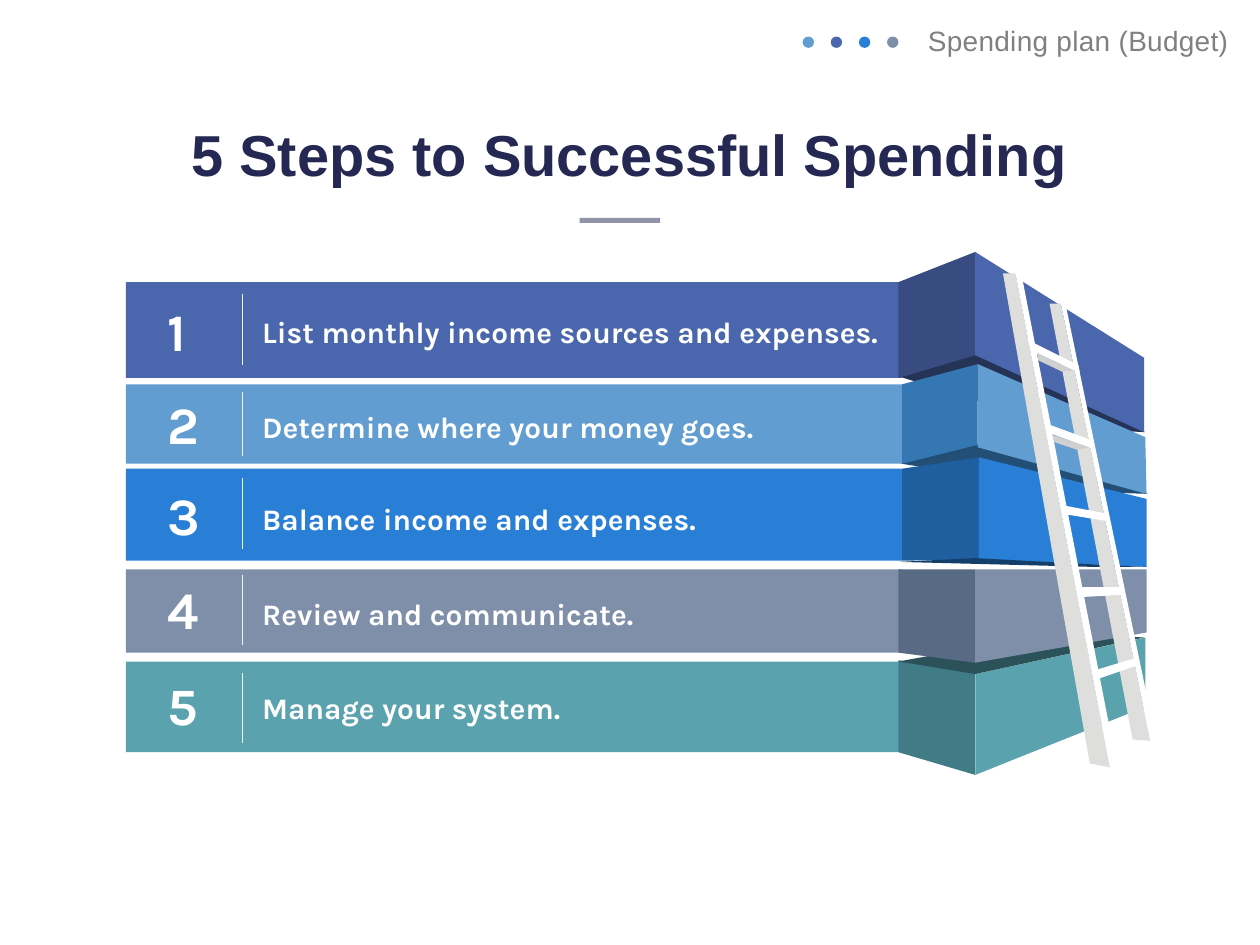
from lxml import etree
from pptx import Presentation
from pptx.dml.color import RGBColor
from pptx.enum.shapes import MSO_CONNECTOR, MSO_SHAPE
from pptx.enum.text import MSO_AUTO_SIZE, PP_ALIGN
from pptx.oxml.ns import qn
from pptx.util import Cm, Pt

RECTANGLE, OVAL = MSO_SHAPE.RECTANGLE, MSO_SHAPE.OVAL
STRAIGHT = MSO_CONNECTOR.STRAIGHT
GROW = MSO_AUTO_SIZE.SHAPE_TO_FIT_TEXT
LEFT, CENTER, RIGHT = PP_ALIGN.LEFT, PP_ALIGN.CENTER, PP_ALIGN.RIGHT

WHITE = RGBColor(0xFF, 0xFF, 0xFF)
GRAY = RGBColor(0x80, 0x80, 0x80)
NAVY = RGBColor(0x24, 0x28, 0x52)
INDIGO = RGBColor(0x4A, 0x66, 0xAC)
INDIGO_SIDE = RGBColor(0x38, 0x4C, 0x81)
INDIGO_UNDER = RGBColor(0x25, 0x33, 0x56)
SKY = RGBColor(0x62, 0x9D, 0xD1)
SKY_SIDE = RGBColor(0x34, 0x77, 0xB2)
SKY_UNDER = RGBColor(0x23, 0x4F, 0x77)
BLUE = RGBColor(0x29, 0x7F, 0xD5)
BLUE_SIDE = RGBColor(0x1F, 0x5F, 0xA0)
BLUE_UNDER = RGBColor(0x14, 0x3F, 0x6A)
SLATE = RGBColor(0x7F, 0x8F, 0xA9)
SLATE_SIDE = RGBColor(0x59, 0x6A, 0x85)
TEAL = RGBColor(0x5A, 0xA2, 0xAE)
TEAL_SIDE = RGBColor(0x41, 0x7B, 0x85)
TEAL_TOP = RGBColor(0x2B, 0x52, 0x59)
RULE = RGBColor(0xF1, 0xF0, 0xF0)
RAIL = RGBColor(0xDE, 0xDE, 0xDD)
RUNG_SHADE = RGBColor(0xCF, 0xD0, 0xD0)

# Positions are in inches.
# text, colour, bar top and bottom, number top, text top, text width, rule top and bottom
STEPS = [
    ("List monthly income sources and expenses.", INDIGO, 2.24, 3, 2.33, 2.41, 5.15, 2.33, 2.9),
    ("Determine where your money goes.", SKY, 3.05, 3.68, 3.07, 3.17, 4.25, 3.11, 3.62),
    ("Balance income and expenses.", BLUE, 3.72, 4.45, 3.79, 3.9, 4.25, 3.79, 4.36),
    ("Review and communicate.", SLATE, 4.52, 5.18, 4.54, 4.65, 4.25, 4.56, 5.12),
    ("Manage your system.", TEAL, 5.25, 5.97, 5.3, 5.4, 4.25, 5.34, 5.9),
]
BAR_LEFT, BAR_RIGHT = 1, 7.16

INDIGO_UNDERSIDE = [(7.14, 2.99), (8.47, 3.4), (9.09, 3.43), (7.75, 2.81)]
BLOCK_FACES = [
    (TEAL_SIDE, [(7.74, 6.15), (7.74, 5.34), (7.13, 5.24), (7.13, 5.97)]),
    (TEAL, [(9.09, 5.61), (7.74, 6.15), (7.74, 5.35), (9.09, 5.06)]),
    (TEAL_TOP, [(7.13, 5.25), (8.41, 5.02), (9.08, 5.06), (7.74, 5.35)]),
    (SLATE_SIDE, [(7.13, 5.18), (7.74, 5.26), (7.74, 4.52), (7.13, 4.52)]),
    (SLATE, [(9.1, 5.02), (7.74, 5.26), (7.74, 4.52), (9.1, 4.52)]),
    (INDIGO_SIDE, [(7.13, 3), (7.74, 2.82), (7.74, 2), (7.13, 2.24)]),
    (INDIGO, [(7.74, 2), (9.08, 2.84), (9.08, 3.43), (7.74, 2.82)]),
    (SKY_UNDER, [(7.15, 3.68), (8.51, 3.9), (9.11, 3.92), (7.76, 3.52)]),
    (SKY_SIDE, [(7.16, 3.68), (7.76, 3.53), (7.76, 2.89), (7.16, 3.05)]),
    (SKY, [(7.76, 3.55), (9.1, 3.92), (9.09, 3.47), (7.76, 2.89)]),
    (BLUE_SIDE, [(7.16, 4.45), (7.77, 4.44), (7.77, 3.63), (7.16, 3.72)]),
    (BLUE, [(9.1, 4.5), (7.77, 4.44), (7.77, 3.63), (9.1, 3.96)]),
    (BLUE_UNDER, [(7.13, 4.46), (8.69, 4.5), (9.08, 4.5), (7.74, 4.43)]),
]
LADDER = [
    (RAIL, [(7.96, 2.17), (8.06, 2.17), (8.81, 6.09), (8.65, 6.06)]),
    (WHITE, [(8.06, 2.17), (8.11, 2.19), (8.86, 6.05), (8.81, 6.09)]),
    (RAIL, [(8.33, 2.41), (8.42, 2.41), (9.13, 5.88), (8.99, 5.87)]),
    (WHITE, [(8.42, 2.41), (8.46, 2.43), (9.17, 5.85), (9.13, 5.88)]),
    (WHITE, [(8.18, 2.78), (8.57, 2.96), (8.56, 2.9), (8.16, 2.7)]),
    (WHITE, [(8.31, 3.43), (8.69, 3.57), (8.68, 3.5), (8.3, 3.36)]),
    (WHITE, [(8.44, 4.08), (8.81, 4.14), (8.8, 4.08), (8.43, 4.01)]),
    (WHITE, [(8.56, 4.74), (8.92, 4.72), (8.91, 4.66), (8.55, 4.66)]),
    (WHITE, [(8.71, 5.39), (9.03, 5.28), (9.02, 5.22), (8.69, 5.32)]),
    (RUNG_SHADE, [(8.52, 2.94), (8.43, 2.95), (8.24, 2.86), (8.23, 2.8)]),
    (RUNG_SHADE, [(8.65, 3.55), (8.55, 3.57), (8.37, 3.51), (8.35, 3.45)]),
]


def length(inches):
    return Cm(inches * 2.54)


class Painter:
    """Draws plain elements on one page, with positions in inches."""

    def __init__(self, page):
        self.shapes = page.shapes

    def paint(self, shape, color):
        shape.shadow.inherit = False
        shape.fill.solid()
        shape.fill.fore_color.rgb = color
        shape.line.fill.background()
        return shape

    def preset(self, kind, left, top, width, height, color):
        box = [length(value) for value in (left, top, width, height)]
        return self.paint(self.shapes.add_shape(kind, *box), color)

    def polygon(self, color, points):
        corners = [(length(x), length(y)) for x, y in points]
        builder = self.shapes.build_freeform(*corners[0])
        builder.add_line_segments(corners[1:], close=True)
        self.paint(builder.convert_to_shape(), color)

    def rule(self, x, top, bottom):
        line = self.shapes.add_connector(
            STRAIGHT, length(x), length(top), length(x), length(bottom))
        line.line.color.rgb = RULE
        line.line.width = Pt(0.14)
        etree.SubElement(line._element.spPr, qn("a:effectLst"))

    def text(self, words, left, top, width, height, size, color, font="Karla",
             bold=True, align=LEFT, wrap=True, margins=(0.1, 0.05), spacing=None):
        box = self.shapes.add_textbox(*[length(v) for v in (left, top, width, height)])
        frame = box.text_frame
        frame.word_wrap = wrap
        frame.auto_size = GROW
        frame.margin_left = frame.margin_right = length(margins[0])
        frame.margin_top = frame.margin_bottom = length(margins[1])
        para = frame.paragraphs[0]
        para.alignment = align
        if spacing:
            para.line_spacing = spacing
        run = para.add_run()
        run.text = words
        run.font.name = font
        run.font.size = Pt(size)
        run.font.bold = bold
        run.font.color.rgb = color
        return run


def set_alpha(shape, percent):
    color = shape.fill._xPr.find(qn("a:solidFill"))[0]
    etree.SubElement(color, qn("a:alpha")).set("val", str(percent * 1000))


def main():
    deck = Presentation()
    deck.slide_width, deck.slide_height = length(10), length(7.5)
    painter = Painter(deck.slides.add_slide(deck.slide_layouts[6]))

    painter.polygon(INDIGO_UNDER, INDIGO_UNDERSIDE)
    for _, color, top, bottom, *_ in STEPS:
        painter.preset(RECTANGLE, BAR_LEFT, top, BAR_RIGHT - BAR_LEFT, bottom - top, color)
    for color, points in BLOCK_FACES + LADDER:
        painter.polygon(color, points)

    for number, step in enumerate(STEPS, 1):
        words, _, _, _, number_top, text_top, width, rule_top, rule_bottom = step
        painter.text(str(number), 1.25, number_top, 0.4, 0.58, 30, WHITE,
                     wrap=False, margins=(0.08, 0.04))
        painter.text(words, 1.99, text_top, width, 0.41, 17, WHITE,
                     margins=(0.09, 0.05), spacing=1.1)
        painter.rule(1.92, rule_top, rule_bottom)

    painter.text("5 Steps to Successful Spending", 1.45, 0.92, 7.09, 0.59, 33, NAVY,
                 font="Arial", align=CENTER, wrap=False, margins=(0.04, 0.02))
    set_alpha(painter.preset(RECTANGLE, 4.6, 1.73, 0.64, 0.04, NAVY), 50)

    header = painter.text("Spending plan (Budget)", 6.42, 0.14, 3.43, 0.37, 16, GRAY,
                          font="Arial", bold=False, align=RIGHT)
    header.font._element.set("spc", "20")
    for index, color in enumerate([SKY, INDIGO, BLUE, SLATE]):
        painter.preset(OVAL, 6.37 + index * 0.67 / 3, 0.29, 0.09, 0.09, color)

    deck.save("out.pptx")


if __name__ == "__main__":
    main()
